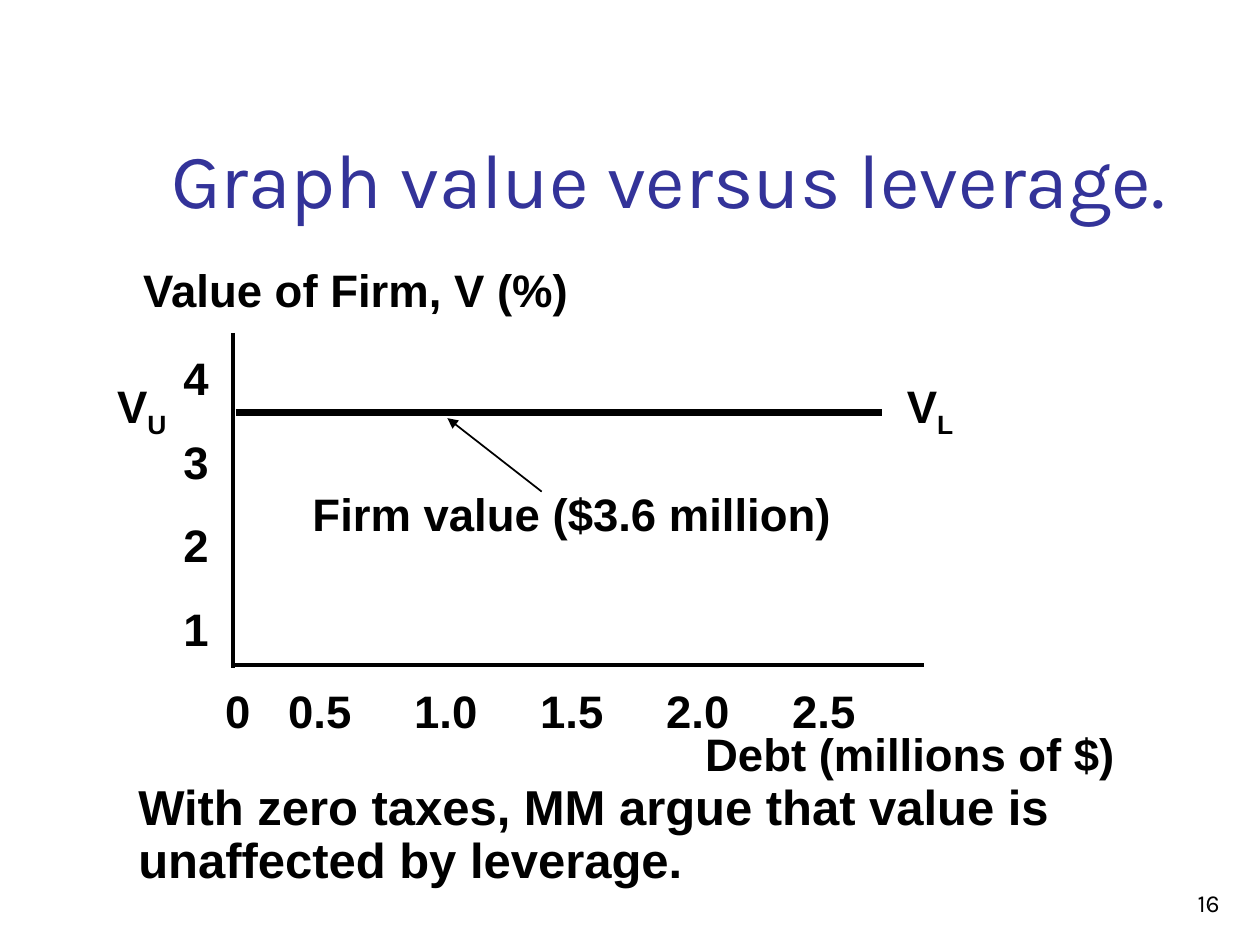
from lxml.etree import SubElement
from pptx import Presentation
from pptx.dml.color import RGBColor
from pptx.enum.shapes import MSO_CONNECTOR
from pptx.enum.text import MSO_ANCHOR as Anchor, PP_ALIGN as Align
from pptx.oxml.ns import qn
from pptx.util import Cm, Pt

BLACK = RGBColor(0x00, 0x00, 0x00)
INDIGO = RGBColor(0x33, 0x33, 0x99)

deck = Presentation()
deck.slide_width, deck.slide_height = Cm(25.4), Cm(19.05)
page = deck.slides.add_slide(deck.slide_layouts[6])


def add_text(area, lines, size=26, font="Arial", color=BLACK, bold=True,
             align=Align.LEFT, anchor=Anchor.TOP, spacing=None, gap=0, wrap=True):
    box = page.shapes.add_textbox(*[Cm(length) for length in area])
    frame = box.text_frame
    frame.word_wrap = wrap
    frame.vertical_anchor = anchor
    for index, line in enumerate(lines):
        para = frame.paragraphs[0] if index == 0 else frame.add_paragraph()
        para.alignment = align
        para.line_spacing = spacing
        para.space_after = Pt(gap)
        for part, words in enumerate(line):
            span = para.add_run()
            span.text = words
            span.font.name = font
            span.font.size = Pt(size)
            span.font.bold = bold
            span.font.color.rgb = color
            if part > 0:
                span.font._element.set("baseline", "-25000")


def add_line(start, end, width):
    line = page.shapes.add_connector(
        MSO_CONNECTOR.STRAIGHT, *[Cm(length) for length in start + end])
    line.line.color.rgb = BLACK
    line.line.width = Pt(width)
    SubElement(line._element.spPr, qn("a:effectLst"))
    return line


add_text((19.56, 17.35, 5.28, 1.27), [["16"]], size=14, font="Karla",
         bold=False, align=Align.RIGHT, anchor=Anchor.BOTTOM)
add_text((3.2, 0.58, 21.64, 4.06), [["Graph value versus leverage."]], size=44,
         font="Karla", color=INDIGO, bold=False, anchor=Anchor.BOTTOM)

add_line((4.7, 6.71), (4.7, 13.46), 2)
add_line((4.7, 13.41), (18.62, 13.41), 2)
add_line((4.75, 8.31), (17.78, 8.31), 4)

for area, caption in [
    ((1.7, 5.28, 10.95, 1.24), "Value of Firm, V (%)"),
    ((12.75, 14.63, 11.2, 1.24), "Debt (millions of $)"),
]:
    add_text(area, [[caption]], align=Align.CENTER, spacing=0.9)

add_text((3.45, 6.93, 1.96, 6.63), [[tick] for tick in "4321"], gap=16.7)
add_text((4.29, 13.64, 20.29, 1.35), [["0\t0.5\t1.0\t1.5\t2.0\t2.5"]])

for area, label in [
    ((18.03, 7.49, 1.47, 1.35), ["V", "L"]),
    ((2.11, 7.49, 1.55, 1.35), ["V", "U"]),
    ((6.05, 9.68, 10.97, 1.35), ["Firm value ($3.6 million)"]),
]:
    add_text(area, [label], wrap=False)

pointer = add_line((10.92, 9.91), (9.02, 8.43), 1)
SubElement(pointer.line._get_or_add_ln(), qn("a:tailEnd"), type="triangle")

add_text((2.54, 15.67, 20.8, 2.41),
         [["With zero taxes, MM argue that value is unaffected by leverage."]],
         size=28, spacing=0.9)

deck.save("out.pptx")
